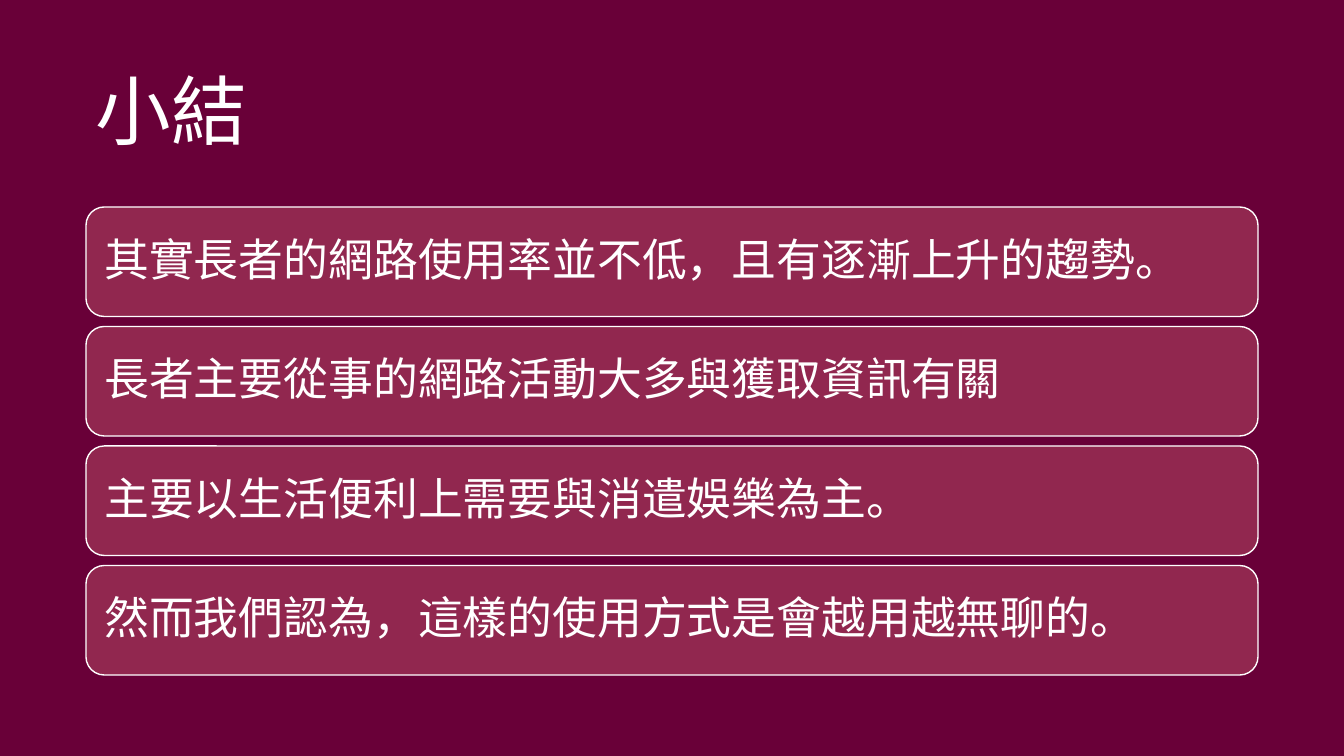
import pptx
import pptx.dml.color
import pptx.enum.shapes
import pptx.enum.text
import pptx.oxml.ns
import pptx.util
from lxml import etree

WIDTH, HEIGHT = 1344, 756
SCALE = 12192000 / WIDTH
POINTS = [
    "其實長者的網路使用率並不低，且有逐漸上升的趨勢。",
    "長者主要從事的網路活動大多與獲取資訊有關",
    "主要以生活便利上需要與消遣娛樂為主。",
    "然而我們認為，這樣的使用方式是會越用越無聊的。",
]


def px(n):
    return pptx.util.Emu(round(n * SCALE))


def color(value):
    return pptx.dml.color.RGBColor.from_string(value)


def write(shape, text, *, size, font, inset_x, inset_y, space_after=0):
    tf = shape.text_frame
    tf.word_wrap = True
    tf.auto_size = pptx.enum.text.MSO_AUTO_SIZE.NONE
    tf.vertical_anchor = pptx.enum.text.MSO_ANCHOR.MIDDLE
    tf.margin_left = tf.margin_right = px(inset_x)
    tf.margin_top = tf.margin_bottom = px(inset_y)
    p = tf.paragraphs[0]
    p.alignment = pptx.enum.text.PP_ALIGN.LEFT
    p.line_spacing = 0.9
    p.space_after = pptx.util.Pt(space_after)
    r = p.add_run()
    r.text = text
    r.font.size = pptx.util.Pt(size)
    r.font.name = font
    r.font.color.rgb = color("FFFFFF")


def add_box(s, kind, x, y, w, h, fill):
    sp = s.shapes.add_shape(kind, px(x), px(y), px(w), px(h))
    sp.shadow.inherit = False
    sp.fill.solid()
    sp.fill.fore_color.rgb = color(fill)
    return sp


def add_background(s, w, h):
    """Lay a translucent veil over the background, behind the title."""
    s.background.fill.solid()
    s.background.fill.fore_color.rgb = color("420023")
    veil = add_box(s, pptx.enum.shapes.MSO_SHAPE.RECTANGLE, 0, 0, w, h, "6E003B")
    veil.line.fill.background()
    rgb = veil.element.spPr.find(".//" + pptx.oxml.ns.qn("a:srgbClr"))
    etree.SubElement(rgb, pptx.oxml.ns.qn("a:alpha"), val="90000")
    s.shapes.title.element.addprevious(veil.element)


def add_title(s, x, y, w, h):
    title = s.shapes.title
    title.left, title.top, title.width, title.height = px(x), px(y), px(w), px(h)
    write(title, "小結", size=54, font="Cabin", inset_x=10, inset_y=5)


def add_points(s, x, y, w, h, gap):
    bar_h = (h - gap * (len(POINTS) - 1)) / len(POINTS)
    for i, text in enumerate(POINTS):
        bar = add_box(s, pptx.enum.shapes.MSO_SHAPE.ROUNDED_RECTANGLE,
                      x, y + i * (bar_h + gap), w, bar_h, "91274F")
        bar.line.color.rgb = color("FFFFFF")
        bar.line.width = pptx.util.Pt(1)
        write(bar, text, size=32, font="Calibri", inset_x=13, inset_y=13,
              space_after=11)


def main():
    prs = pptx.Presentation()
    prs.slide_width, prs.slide_height = px(WIDTH), px(HEIGHT)
    s = prs.slides.add_slide(prs.slide_layouts[5])
    add_background(s, WIDTH, HEIGHT)
    add_title(s, 86, 42, 1172, 146)
    add_points(s, 86, 207, 1172, 468, gap=10)
    prs.save("out.pptx")


if __name__ == "__main__":
    main()
